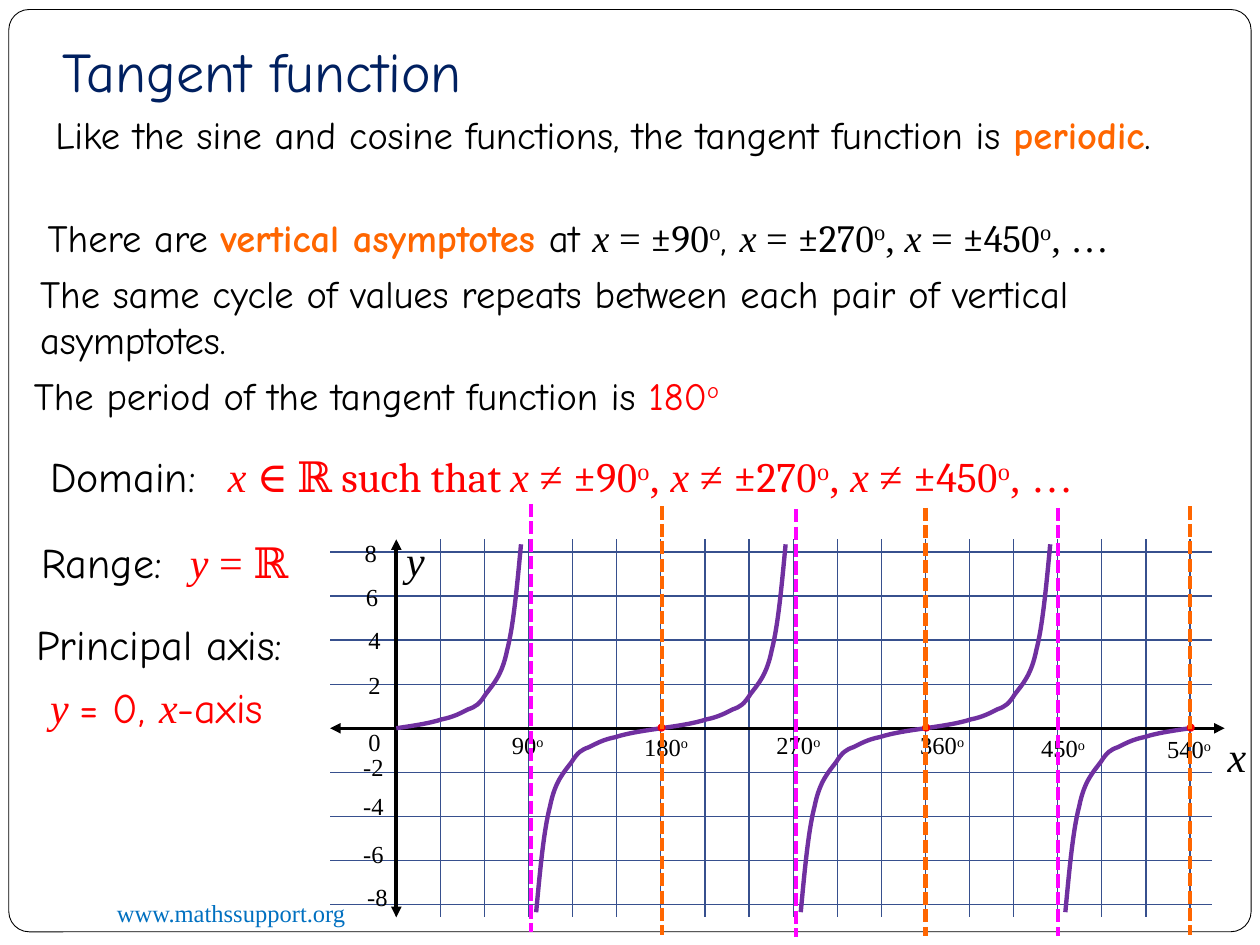
from lxml import etree
from pptx import Presentation, util as u
from pptx.dml.color import RGBColor
from pptx.enum import dml, shapes as sh, text
from pptx.oxml.ns import qn

COMIC, TIMES, CAMBRIA = "Comic Neue", "Times New Roman", "Cambria"
BLACK, RED, ORANGE, PINK = "000000", "FF0000", "FF6600", "FF00FF"
NAVY, BLUE, GRID, PURPLE = "002060", "0070C0", "37508E", "7030A0"
ITALIC = dict(font=TIMES, italic=True)
SUP = dict(font=TIMES, sup=True)

# Rising half of one tangent branch, in inches from its zero: start, then Bezier triples
RISE = [(0, 0), (.14, -.02), (.27, -.04), (.36, -.07), (.46, -.09), (.51, -.12),
        (.57, -.15), (.63, -.17), (.66, -.19), (.71, -.27), (.77, -.35), (.84, -.42),
        (.88, -.62), (.93, -.81), (.96, -1.14), (.99, -1.46)]
FALL = [(-x, -y) for x, y in reversed(RISE)]


def color(value):
    return RGBColor.from_string(value)


def set_line(sp, hex_color, width):
    sp.line.color.rgb = color(hex_color)
    sp.line.width = u.Pt(width)


def add_text(parts, box, content, size=22, font=COMIC, fill=BLACK, wrap=True):
    """content is a string or a list of (string, run format) pairs."""
    tf = parts.add_textbox(*map(u.Inches, box)).text_frame
    tf.word_wrap = wrap
    tf.auto_size = text.MSO_AUTO_SIZE.SHAPE_TO_FIT_TEXT
    p = tf.paragraphs[0]
    for words, fmt in [(content, {})] if isinstance(content, str) else content:
        r = p.add_run()
        r.text = words
        f = r.font
        f.size = u.Pt(size)
        f.name = fmt.get("font", font)
        f.color.rgb = color(fmt.get("fill", fill))
        f.bold = fmt.get("bold", False)
        f.italic = fmt.get("italic", False)
        if fmt.get("sup"):
            f._element.set("baseline", "30000")


def add_line(parts, start, end, hex_color, width, dash=None, arrows=False):
    ends = [u.Inches(v) for v in (*start, *end)]
    c = parts.add_connector(sh.MSO_CONNECTOR.STRAIGHT, *ends)
    set_line(c, hex_color, width)
    if dash:
        c.line.dash_style = dash
    if arrows:
        for tag in ("a:headEnd", "a:tailEnd"):
            etree.SubElement(c.line._ln, qn(tag), type="triangle")
    etree.SubElement(c._element.spPr, qn("a:effectLst"))


def add_shape(parts, kind, box, fill, line, width):
    sp = parts.add_shape(kind, *map(u.Inches, box))
    sp.shadow.inherit = False
    sp.fill.solid()
    sp.fill.fore_color.rgb = color(fill)
    set_line(sp, line, width)
    return sp


def add_curve(parts, zero, offsets):
    """Draw Bezier triples placed relative to a zero of the function."""
    pts = [(u.Inches(zero[0] + x), u.Inches(zero[1] + y)) for x, y in offsets]
    fb = parts.build_freeform(*pts[0])
    fb.add_line_segments(pts[1:], close=False)
    sp = fb.convert_to_shape()
    sp.shadow.inherit = False
    sp.fill.background()
    set_line(sp, PURPLE, 2.5)
    # Turn every three line points into one cubic segment
    steps = list(sp._element.iter(qn("a:lnTo")))
    outline = steps[0].getparent()
    for i in range(0, len(steps), 3):
        cubic = etree.SubElement(outline, qn("a:cubicBezTo"))
        for step in steps[i:i + 3]:
            cubic.append(step[0])
            outline.remove(step)


def angle_list(sign, first_comma):
    """Runs for x (sign) ±90º, ±270º, ±450º, …"""
    runs = []
    commas = [(", ", dict(font=first_comma)), (", ", dict(font=TIMES)), (", …", dict(font=TIMES))]
    for tens, comma in zip(("9", "27", "45"), commas):
        runs += [("x ", ITALIC), (sign + " ", dict(font=TIMES)), ("±" + tens, dict(font=CAMBRIA)),
                 ("0", dict(font=TIMES)), ("o", SUP), comma]
    return runs


def draw_frame(parts, width, height):
    frame = add_shape(parts, sh.MSO_SHAPE.ROUNDED_RECTANGLE,
                      (.007 * width, .01 * height, .986 * width, .976 * height),
                      "FFFFFF", BLACK, .5)
    frame.adjustments[0] = .022
    add_text(parts, (.083 * width, .944 * height, 3.25, .34), "www.mathssupport.org",
             size=14, font=TIMES, fill=BLUE)


def draw_statements(parts, left, top):
    """Title and the sentences below it."""
    strong = dict(fill=ORANGE, bold=True)
    add_text(parts, (left + .23, top, 8.64, .64), "Tangent function", size=32, fill=NAVY)
    rows = [
        (.17, .59, 9.51, [("Like the sine and cosine functions, the tangent function is ", {}),
                          ("periodic", strong), (".", {})]),
        (.11, 1.41, 9.67, [("There are ", {}), ("vertical asymptotes ", strong), ("at ", {}),
                           *angle_list("=", COMIC)]),
        (.05, 1.85, 9.59, "The same cycle of values repeats between each pair of vertical asymptotes."),
        (0, 2.66, 9.1, [("The period of the tangent function is ", {}), ("180", dict(fill=RED)),
                        ("o", dict(fill=RED, sup=True))]),
    ]
    for dx, dy, width, content in rows:
        add_text(parts, (left + dx, top + dy, width, .47), content)


def draw_properties(parts, left, top):
    """Domain, range and principal axis: black labels, red answers."""
    domain = angle_list("≠", TIMES)
    domain.insert(1, ("∈ ℝ such that ", dict(font=CAMBRIA)))
    domain.insert(2, ("x ", ITALIC))
    rows = [
        (.11, 0, 1.99, "Domain:", BLACK),
        (.04, .68, 1.61, "Range:", BLACK),
        (0, 1.33, 2.72, "Principal axis:", BLACK),
        (1.52, 0, 7.75, domain, RED),
        (1.22, .68, 1.16, [("y", ITALIC), (" = ", dict(font=TIMES)), ("ℝ", dict(font=CAMBRIA))], RED),
        (.11, 1.83, 2.72, [("y ", ITALIC), ("= 0, ", {}), ("x", ITALIC), ("-axis", {})], RED),
    ]
    for dx, dy, width, content, fill in rows:
        add_text(parts, (left + dx, top + dy, width, .5), content, size=24, fill=fill)


def draw_graph(parts, left, top, width, height):
    """Tangent graph; columns and rows are counted from the origin."""
    cell = width / 20
    right, bottom = left + width, top + height

    def at(col, row):
        return left + (col + 1.5) * cell, top + 1.5 + row * cell

    # Axes and grid
    axes = parts.add_group_shape().shapes
    y_axis, x_axis = at(0, 0)
    for col in range(1, 19):
        x = at(col, 0)[0]
        add_line(axes, (x, top), (x, bottom), GRID, .75)
    for row in (-4, -3, -2, -1, 1, 2, 3, 4):
        y = at(0, row)[1]
        add_line(axes, (left, y), (right, y), GRID, .75)
    add_line(axes, (left, x_axis), (right + .1, x_axis), BLACK, 2, arrows=True)
    add_line(axes, (y_axis, top), (y_axis, bottom), BLACK, 2, arrows=True)

    # Axis names and scale labels
    for name, col, row in (("x", 18.57, -.09), ("y", -.06, -4.54)):
        add_text(axes, (*at(col, row), .31, .4), [(name, ITALIC)], size=24, wrap=False)
    scale_y = [("8", -1, -4.46), ("6", -.97, -3.46), ("4", -.91, -2.49), ("2", -.91, -1.46),
               ("0", -.91, -.17), ("-2", -1.03, .4), ("-4", -1.03, 1.29), ("-6", -1.03, 2.37),
               ("-8", -.94, 3.34)]
    for label, col, row in scale_y:
        add_text(axes, (*at(col, row), .24 + .06 * len(label), .34), label, size=14, font=TIMES,
                 wrap=False)
    scale_x = [("90", 2.34, -.09), ("180", 5.34, -.06), ("270", 8.34, -.09),
               ("360", 11.6, -.09), ("450", 14.34, -.03), ("540", 17.2, 0)]
    for label, col, row in scale_x:
        add_text(axes, (*at(col, row), .26 + .1 * len(label), .34), [(label, {}), ("o", SUP)],
                 size=14, font=TIMES, wrap=False)

    # Branches of the curve around each zero
    branches = [(0, RISE), (6, FALL + RISE[1:]), (12, RISE), (12, FALL), (18, FALL)]
    for col, offsets in branches:
        add_curve(parts, at(col, 0), offsets)
    for col in (6, 12, 18):
        x, y = at(col, 0)
        add_shape(parts, sh.MSO_SHAPE.OVAL, (x - .02, y - .03, .05, .05), RED, RED, 1)

    # Asymptotes (pink) and ends of periods (orange)
    dashed = [(3.06, -5.09, PINK), (6.03, -5.03, ORANGE), (9.06, -4.97, PINK),
              (12, -5, ORANGE), (15, -5, PINK), (18, -5.03, ORANGE)]
    for col, row, stroke in dashed:
        x, y = at(col, row)
        add_line(parts, (x, y), (x, y + 3.4), stroke, 2.5, dash=dml.MSO_LINE.SQUARE_DOT)


def main():
    prs = Presentation()
    prs.slide_width, prs.slide_height = u.Inches(10), u.Inches(7.5)
    parts = prs.slides.add_slide(prs.slide_layouts[6]).shapes
    draw_frame(parts, 10, 7.5)
    draw_graph(parts, 2.62, 4.28, 7, 3)
    draw_statements(parts, .17, .24)
    draw_properties(parts, .19, 3.53)
    prs.save("out.pptx")


if __name__ == "__main__":
    main()
